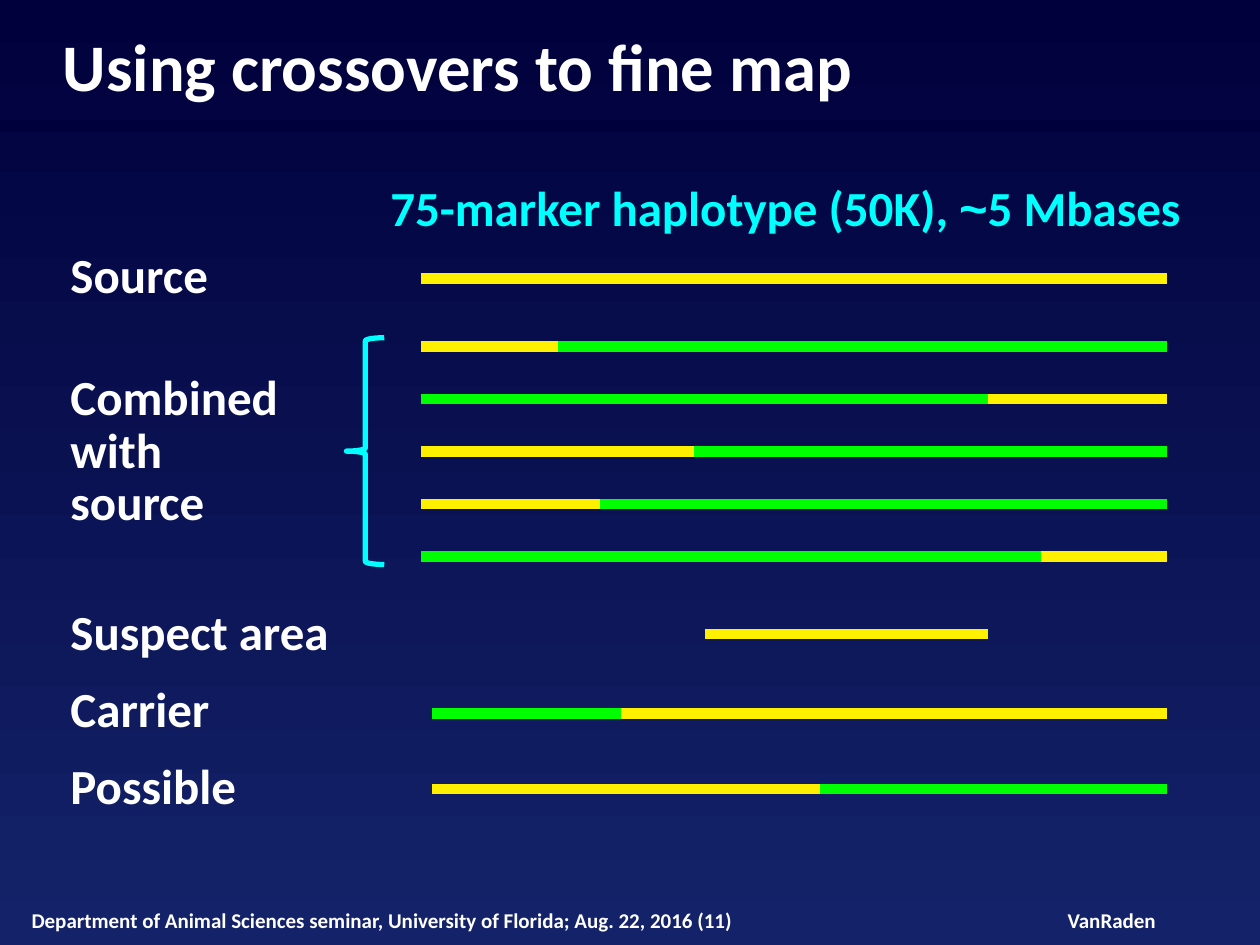
from dataclasses import dataclass

from lxml import etree
from pptx import Presentation
from pptx import util as u
from pptx.dml.color import RGBColor
from pptx.enum import shapes, text
from pptx.oxml.ns import qn


@dataclass(frozen=True)
class Theme:
    top: RGBColor = RGBColor(0x00, 0x00, 0x3C)
    bottom: RGBColor = RGBColor(0x14, 0x23, 0x69)
    white: RGBColor = RGBColor(0xFF, 0xFF, 0xFF)
    cyan: RGBColor = RGBColor(0x00, 0xFF, 0xFF)
    source: RGBColor = RGBColor(0xFF, 0xF0, 0x00)
    other: RGBColor = RGBColor(0x00, 0xFF, 0x00)
    font: str = "Calibri"
    tilde_font: str = "Arial"
    title_size: float = 38
    label_size: float = 28
    footer_size: float = 12


THEME = Theme()
LEFT, RIGHT = 240.5, 666.7
LATE_LEFT = 247
FIRST_COMBINED, COMBINED_STEP = 198, 30

# Start, crossover, end, and whether the source segment comes first
COMBINED = [
    (LEFT, 319, RIGHT, True),
    (LEFT, 564.5, RIGHT, False),
    (LEFT, 396.7, RIGHT, True),
    (LEFT, 342.7, RIGHT, True),
    (LEFT, 594.7, RIGHT, False),
]

# Label, line spacing, space before
LABELS = [
    ("Source", 32, 0),
    ("Combined", 32, 38),
    ("with", 30, 0),
    ("source", 30, 0),
    ("Suspect area", 32, 42),
    ("Carrier", 32, 12),
    ("Possible", 32, 12),
]


def paint_background(slide):
    fill = slide.background.fill
    fill.gradient()
    fill.gradient_angle = 270
    for stop, color in zip(fill.gradient_stops, (THEME.top, THEME.bottom)):
        stop.color.rgb = color


def add_box(slide, left, top, width, height, inset=True, wrap=True):
    frame = slide.shapes.add_textbox(
        u.Pt(left), u.Pt(top), u.Pt(width), u.Pt(height)).text_frame
    frame.word_wrap = wrap
    if not inset:
        frame.margin_left = frame.margin_right = 0
        frame.margin_top = frame.margin_bottom = 0
    return frame


def add_run(paragraph, words, size, color=THEME.white, font=THEME.font):
    run = paragraph.add_run()
    run.text = words
    run.font.name = font
    run.font.size = u.Pt(size)
    run.font.bold = True
    run.font.color.rgb = color


def add_footer(slide, words, left, width, align, wrap):
    frame = add_box(slide, left, 518.4, width, 14.4, inset=False, wrap=wrap)
    frame.vertical_anchor = text.MSO_ANCHOR.MIDDLE
    frame.paragraphs[0].alignment = align
    add_run(frame.paragraphs[0], words, THEME.footer_size)


def add_labels(slide):
    frame = add_box(slide, 33.2, 137.5, 234, 334)
    for index, (words, spacing, before) in enumerate(LABELS):
        label = frame.add_paragraph() if index else frame.paragraphs[0]
        label.line_spacing = u.Pt(spacing)
        if before:
            label.space_before = u.Pt(before)
        add_run(label, words, THEME.label_size)


def add_segment(slide, start, end, y, color, width=6):
    segment = slide.shapes.add_connector(
        shapes.MSO_CONNECTOR.STRAIGHT,
        u.Pt(start), u.Pt(y), u.Pt(end), u.Pt(y))
    segment.line.color.rgb = color
    segment.line.width = u.Pt(width)
    etree.SubElement(segment._element.spPr, qn("a:effectLst"))


def add_haplotype(slide, y, start, crossover, end, source_first):
    """Draw a recombined haplotype as two segments meeting at the crossover."""
    colors = (THEME.source, THEME.other)
    first, second = colors if source_first else colors[::-1]
    add_segment(slide, start, crossover, y, first)
    add_segment(slide, crossover, end, y, second)


def add_brace(slide):
    brace = slide.shapes.add_shape(
        shapes.MSO_SHAPE.LEFT_BRACE,
        u.Pt(198), u.Pt(193), u.Pt(21.6), u.Pt(129.6))
    brace.shadow.inherit = False
    brace.fill.background()
    brace.line.color.rgb = THEME.cyan
    brace.line.width = u.Pt(3)


def main():
    deck = Presentation()
    deck.slide_width, deck.slide_height = u.Pt(720), u.Pt(540)
    slide = deck.slides.add_slide(deck.slide_layouts[6])
    paint_background(slide)

    add_footer(slide, "VanRaden", 609.8, 51, text.PP_ALIGN.CENTER, False)
    add_segment(slide, 0, 720, 72, THEME.top, 6.5)
    add_footer(
        slide,
        "Department of Animal Sciences seminar, University of Florida; "
        "Aug. 22, 2016 (11)",
        18, 444, text.PP_ALIGN.LEFT, True)

    title = add_box(slide, 36, 14.4, 648, 46, inset=False)
    add_run(title.paragraphs[0], "Using crossovers to fine map",
            THEME.title_size)
    add_labels(slide)

    add_segment(slide, LEFT, RIGHT, 159.3, THEME.source)
    add_segment(slide, 402.7, 564.5, 362.3, THEME.source)
    for row, haplotype in enumerate(COMBINED):
        add_haplotype(slide, FIRST_COMBINED + row * COMBINED_STEP, *haplotype)
    add_haplotype(slide, 407.6, LATE_LEFT, 355, RIGHT, False)
    add_haplotype(slide, 450.8, LATE_LEFT, 468.7, RIGHT, True)
    add_brace(slide)

    heading = add_box(slide, 216, 98, 473, 41).paragraphs[0]
    for words, font in (("75-marker haplotype (50K), ", THEME.font),
                        ("~", THEME.tilde_font),
                        ("5 Mbases", THEME.font)):
        add_run(heading, words, THEME.label_size, THEME.cyan, font)

    deck.save("out.pptx")


if __name__ == "__main__":
    main()
